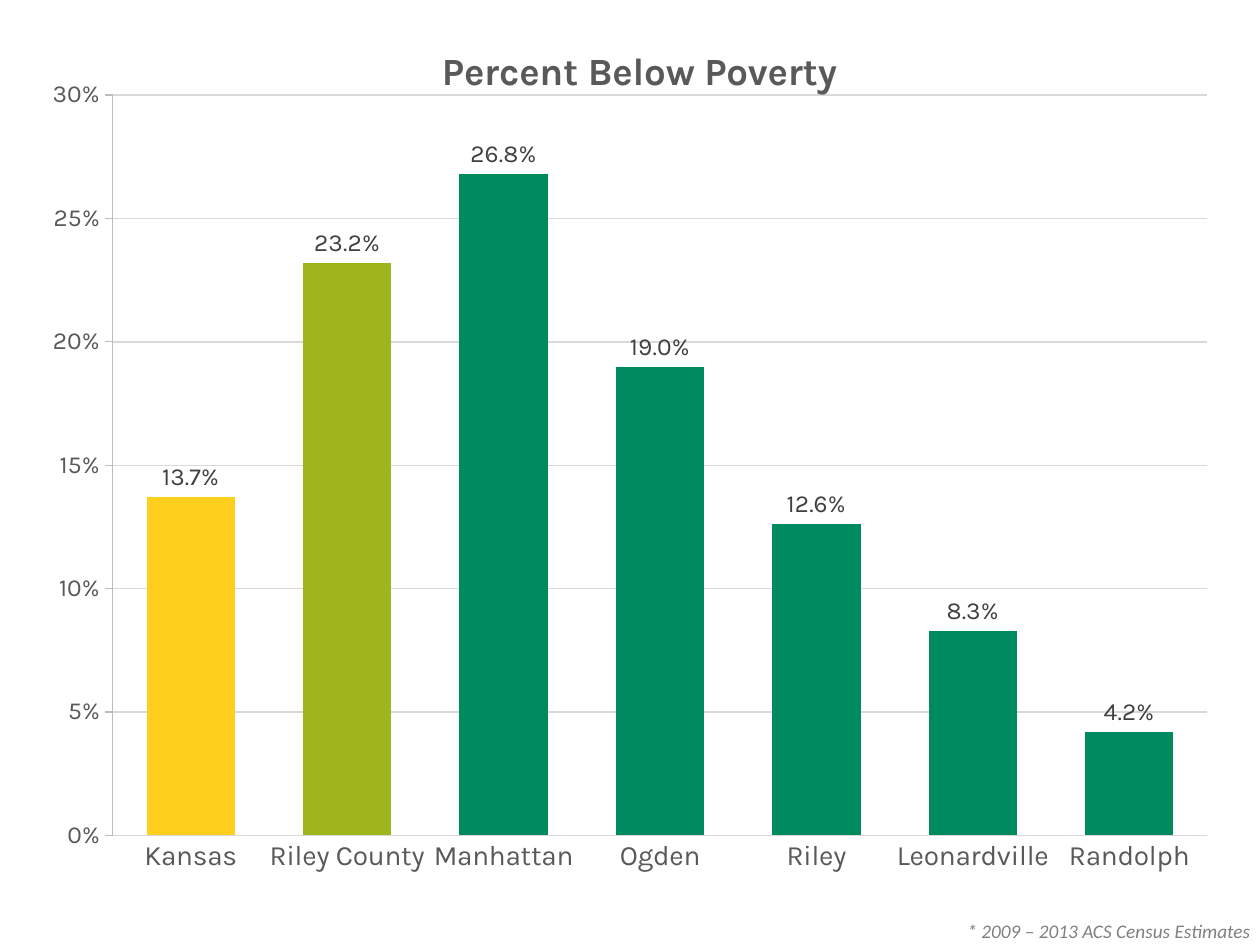
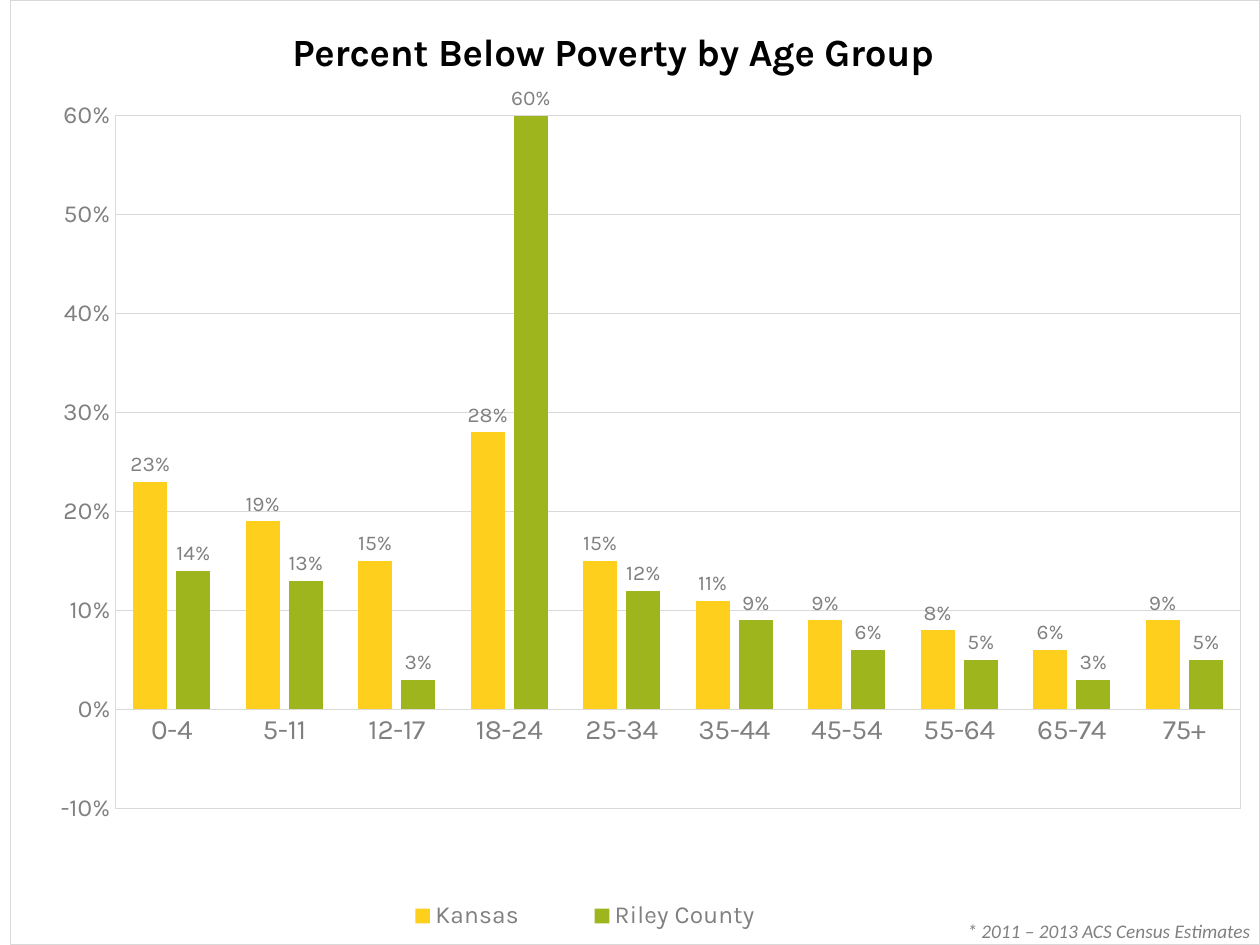
from pptx import Presentation
from pptx.chart.data import CategoryChartData
from pptx.dml.color import RGBColor
from pptx.enum.chart import XL_CHART_TYPE, XL_LABEL_POSITION, XL_LEGEND_POSITION, XL_TICK_MARK
from pptx.oxml import parse_xml
from pptx.oxml.ns import nsdecls, qn
from pptx.util import Pt

COLUMNS = XL_CHART_TYPE.COLUMN_CLUSTERED
OUTSIDE_END = XL_LABEL_POSITION.OUTSIDE_END
BOTTOM = XL_LEGEND_POSITION.BOTTOM
TICK_NONE, TICK_OUTSIDE = XL_TICK_MARK.NONE, XL_TICK_MARK.OUTSIDE

YELLOW = RGBColor(0xFF, 0xCF, 0x1D)
LIME = RGBColor(0x9F, 0xB5, 0x1D)
GREEN = RGBColor(0x00, 0x8A, 0x5F)
BLACK = RGBColor(0x00, 0x00, 0x00)
DARK = RGBColor(0x40, 0x40, 0x40)
CHARCOAL = RGBColor(0x59, 0x59, 0x59)
GREY = RGBColor(0x80, 0x80, 0x80)
AXIS_GREY = RGBColor(0xBD, 0xBD, 0xBD)
GRID_GREY = RGBColor(0xD9, 0xD9, 0xD9)


class PovertyDeck:
    """Builds slides of column charts with a shared style and source note."""

    heading_font = "Karla"
    note_font = "Calibri"
    line_width = Pt(0.75)

    def __init__(self):
        self.presentation = Presentation()
        self.presentation.slide_width = Pt(720)
        self.presentation.slide_height = Pt(540)
        self.slide = None

    def add_slide(self):
        self.slide = self.presentation.slides.add_slide(self.presentation.slide_layouts[6])

    def add_note(self, text):
        box = self.slide.shapes.add_textbox(Pt(545.76), Pt(522), Pt(174.24), Pt(18))
        box.text_frame.word_wrap = False
        box.text_frame.margin_right = Pt(0)
        paragraph = box.text_frame.paragraphs[0]
        paragraph.text = text
        self.style_font(paragraph.font, 11, GREY, self.note_font)
        paragraph.font.italic = True

    def add_columns(self, top, categories, series, gap, overlap=0):
        data = CategoryChartData()
        data.categories = categories
        for name, values, _ in series:
            data.add_series(name, values)
        frame = self.slide.shapes.add_chart(
            COLUMNS, Pt(5.76), Pt(top), Pt(714.24), Pt(540 - top), data)
        chart = frame.chart
        self.style_font(chart.font, 10, BLACK)
        chart.has_legend = False
        plot = chart.plots[0]
        plot.vary_by_categories = False
        plot.gap_width, plot.overlap = gap, overlap
        for column, (_, _, color) in zip(plot.series, series):
            self.fill(column, color)
        return chart

    def add_title(self, chart, text, color, left, top):
        chart.has_title = True
        frame = chart.chart_title.text_frame
        frame.text = text
        font = frame.paragraphs[0].font
        self.style_font(font, 22, color)
        font.bold = True
        self.place(chart.element.find(".//" + qn("c:title")), 1, x=left, y=top)

    def add_legend(self, chart, color, **position):
        chart.has_legend = True
        chart.legend.position = BOTTOM
        chart.legend.include_in_layout = False
        self.style_font(chart.legend.font, 14, color)
        self.place(chart.element.find(".//" + qn("c:legend")), 1, **position)

    def add_labels(self, chart, number_format, size, color):
        for column in chart.plots[0].series:
            labels = column.data_labels
            labels.show_value = True
            labels.number_format = number_format
            labels.number_format_is_linked = False
            labels.position = OUTSIDE_END
            self.style_font(labels.font, size, color)

    def style_axes(self, chart, color, low, high, step, line=None):
        category_axis, value_axis = chart.category_axis, chart.value_axis
        category_axis.major_tick_mark = TICK_NONE
        self.style_font(category_axis.tick_labels.font, 16, color)
        self.draw_line(category_axis.format.line, GRID_GREY)
        value_axis.minimum_scale, value_axis.maximum_scale = low, high
        value_axis.major_unit = step
        value_axis.major_tick_mark = TICK_OUTSIDE if line else TICK_NONE
        value_axis.tick_labels.number_format = "0%"
        value_axis.tick_labels.number_format_is_linked = False
        self.style_font(value_axis.tick_labels.font, 14, color)
        self.draw_line(value_axis.format.line, line)
        self.draw_line(value_axis.major_gridlines.format.line, GRID_GREY)

    def style_areas(self, chart, border=None, **position):
        outline = "<a:noFill/>"
        if border:
            outline = f'<a:solidFill><a:srgbClr val="{border}"/></a:solidFill>'
        properties = (f'<c:spPr {nsdecls("c", "a")}><a:noFill/>'
                      f'<a:ln w="{self.line_width}">{outline}</a:ln></c:spPr>')
        plot_area = chart.element.find(".//" + qn("c:plotArea"))
        self.place(plot_area, 0, "inner", **position)
        plot_area.append(parse_xml(properties))
        chart.element.find(qn("c:chart")).addnext(parse_xml(properties))

    def style_font(self, font, size, color, name=heading_font):
        font.name, font.size, font.color.rgb = name, Pt(size), color

    def draw_line(self, line, color):
        if color:
            line.color.rgb = color
            line.width = self.line_width
        else:
            line.fill.background()

    def fill(self, element, color):
        element.format.fill.solid()
        element.format.fill.fore_color.rgb = color

    def place(self, parent, index, target=None, **position):
        for layout in parent.findall(qn("c:layout")):
            parent.remove(layout)
        settings = f'<c:layoutTarget val="{target}"/>' if target else ""
        settings += '<c:xMode val="edge"/><c:yMode val="edge"/>'
        settings += "".join(f'<c:{key} val="{value}"/>' for key, value in position.items())
        parent.insert(index, parse_xml(
            f'<c:layout {nsdecls("c")}><c:manualLayout>{settings}</c:manualLayout></c:layout>'))


def add_poverty_by_place(deck):
    deck.add_slide()
    deck.add_note("* 2009 – 2013 ACS Census Estimates")
    places = ["Kansas", "Riley County", "Manhattan", "Ogden", "Riley", "Leonardville", "Randolph"]
    rates = [0.137, 0.232, 0.268, 0.19, 0.126, 0.083, 0.042]
    chart = deck.add_columns(5.76, places, [("Series 1", rates, GREEN)], gap=77)
    for index, color in enumerate([YELLOW, LIME]):
        deck.fill(chart.plots[0].series[0].points[index], color)
    deck.add_title(chart, "Percent Below Poverty", CHARCOAL, 0.34, 0.03)
    deck.style_axes(chart, CHARCOAL, 0, 0.3, 0.05, AXIS_GREY)
    deck.add_labels(chart, "0.0%", 14, DARK)
    deck.style_areas(chart, x=0.082, y=0.091, w=0.876, h=0.792)


def add_poverty_by_age(deck):
    deck.add_slide()
    deck.add_note("* 2011 – 2013 ACS Census Estimates")
    ages = ["0-4", "5-11", "12-17", "18-24", "25-34", "35-44", "45-54", "55-64", "65-74", "75+"]
    series = [
        ("Kansas", [0.23, 0.19, 0.15, 0.28, 0.15, 0.11, 0.09, 0.08, 0.06, 0.09], YELLOW),
        ("Riley County", [0.14, 0.13, 0.03, 0.6, 0.12, 0.09, 0.06, 0.05, 0.03, 0.05], LIME),
    ]
    chart = deck.add_columns(0, ages, series, gap=104, overlap=-27)
    deck.add_title(chart, "Percent Below Poverty by Age Group", BLACK, 0.22, 0.02)
    deck.style_axes(chart, GREY, -0.1, 0.6, 0.1)
    deck.add_labels(chart, "0%", 12, GREY)
    deck.add_legend(chart, GREY, x=0.27, y=0.94, w=0.38, h=0.06)
    deck.style_areas(chart, GRID_GREY, x=0.084, y=0.122, w=0.901, h=0.734)


def main():
    deck = PovertyDeck()
    add_poverty_by_place(deck)
    add_poverty_by_age(deck)
    deck.presentation.save("out.pptx")


if __name__ == "__main__":
    main()
